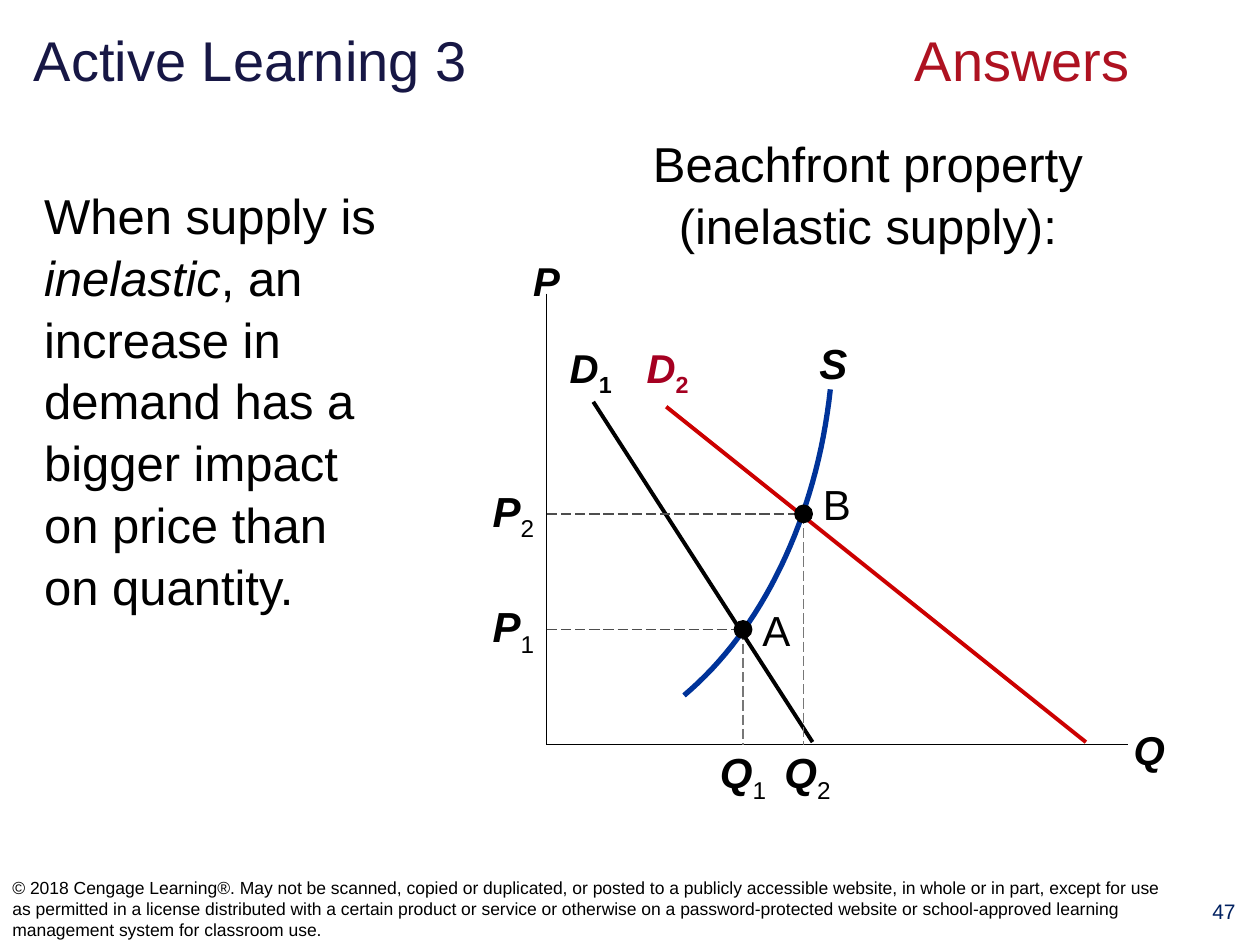
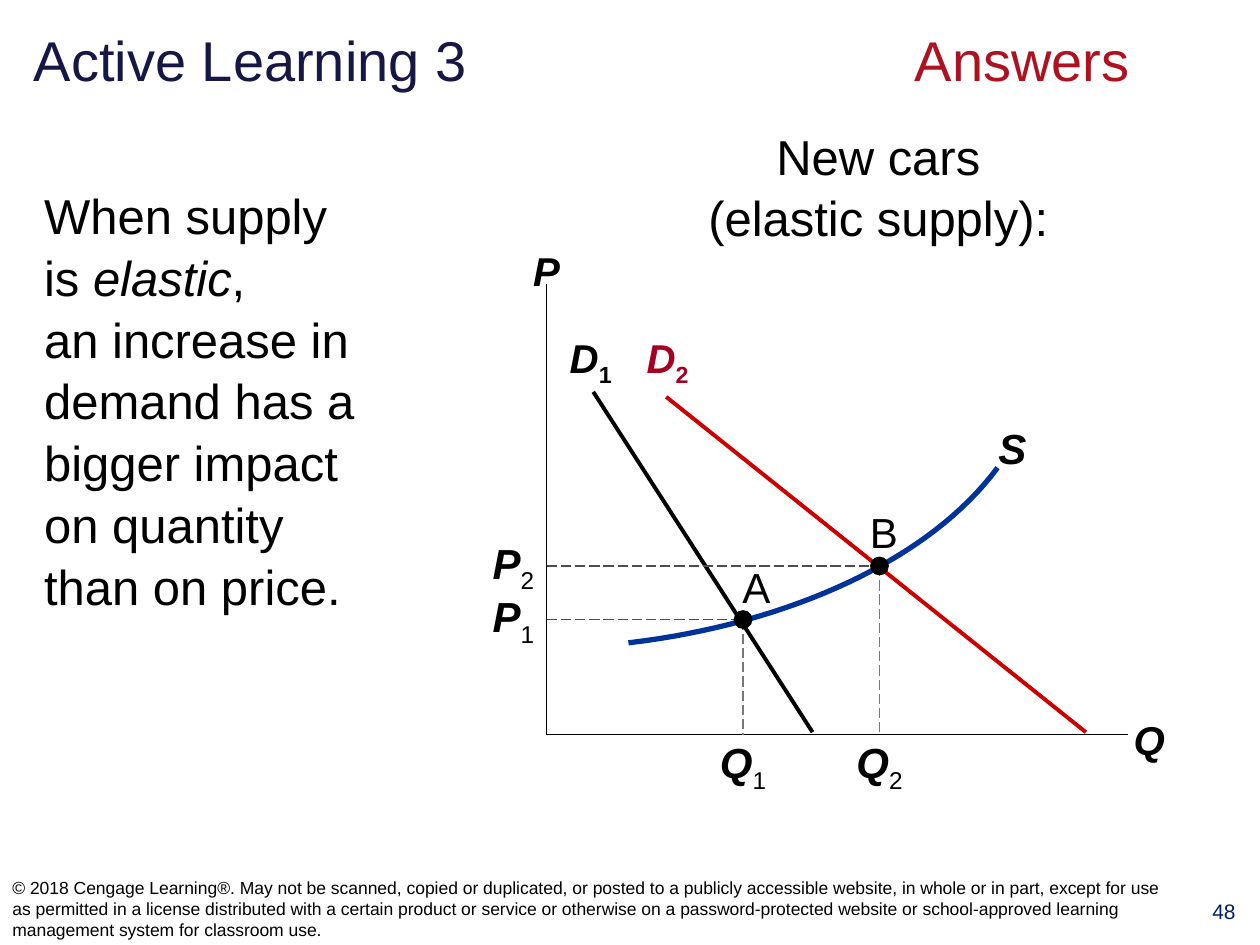
from dataclasses import dataclass
from lxml import etree
from pptx import Presentation
from pptx.dml.color import RGBColor
from pptx.enum.dml import MSO_LINE
from pptx.enum.shapes import MSO_CONNECTOR, MSO_SHAPE
from pptx.enum.text import MSO_ANCHOR, MSO_AUTO_SIZE, PP_ALIGN
from pptx.oxml.ns import qn
from pptx.util import Cm, Pt

LEFT, CENTER, RIGHT = PP_ALIGN.LEFT, PP_ALIGN.CENTER, PP_ALIGN.RIGHT
TOP, MIDDLE = MSO_ANCHOR.TOP, MSO_ANCHOR.MIDDLE
STRAIGHT, OVAL = MSO_CONNECTOR.STRAIGHT, MSO_SHAPE.OVAL
LONG_DASH, NO_FIT = MSO_LINE.LONG_DASH, MSO_AUTO_SIZE.NONE


@dataclass(frozen=True)
class Theme:
    font: str = "Arial"
    black: str = "000000"
    navy: str = "171745"
    answer: str = "AE1221"
    page: str = "002060"
    demand: str = "CC0000"
    demand_label: str = "A50021"
    supply: str = "003399"
    price_guide: str = "4D4D4D"
    quantity_guide: str = "777777"
    title_size: int = 32
    body_size: int = 28
    point_size: int = 24
    curve_size: int = 23
    page_size: int = 12
    footer_size: int = 10
    thin: float = 0.75
    medium: float = 2.25
    thick: float = 3


T = Theme()

# Content; chart positions are cm right of and above the origin
TITLE = ("Active Learning 3", "Answers")
FOOTER = (
    "© 2018 Cengage Learning®. May not be scanned, copied or duplicated, or posted "
    "to a publicly accessible website, in whole or in part, except for use as "
    "permitted in a license distributed with a certain product or service or "
    "otherwise on a password-protected website or school-approved learning "
    "management system for classroom use."
)
DEMAND = [
    {"sub": "1", "ends": [(0.94, 6.91), (5.36, 0.05)], "label": (0.89, 7.54),
     "line": T.black, "text": T.black},
    {"sub": "2", "ends": [(2.41, 6.81), (10.87, 0.05)], "label": (2.44, 7.54),
     "line": T.demand, "text": T.demand_label},
]
SLIDES = [
    {
        "page": "47",
        "body": ("When supply is ", "inelastic", ", an increase in demand has a "
                 "bigger impact on price than on quantity."),
        "heading": "Beachfront property (inelastic supply):",
        "heading_box": (12.62, 2.51, 9.75, 2.95),
        "base": 15.01,
        "supply": [(2.77, 0.99), (4.34, 2.31), (5.44, 4.57), (5.72, 7.16)],
        "supply_label": (5.78, 7.7),
        "points": [
            {"name": "A", "sub": "1", "at": (3.96, 2.32), "offset": (0.67, 0), "q_shift": 0},
            {"name": "B", "sub": "2", "at": (5.18, 4.65), "offset": (0.67, 0.2), "q_shift": 0.08},
        ],
    },
    {
        "page": "48",
        "body": ("When supply\nis ", "elastic", ",\nan increase in demand has a "
                 "bigger impact on quantity than on price."),
        "heading": "New cars\n(elastic supply):",
        "heading_box": (13.08, 2.36, 9.25, 2.95),
        "base": 14.81,
        "supply": [(1.65, 1.85), (4.95, 2.24), (7.75, 3.56), (9.09, 5.38)],
        "supply_label": (9.39, 5.79),
        "points": [
            {"name": "A", "sub": "1", "at": (3.96, 2.32), "offset": (0.27, 0.66), "q_shift": 0},
            {"name": "B", "sub": "2", "at": (6.71, 3.4), "offset": (0.09, 0.69), "q_shift": 0},
        ],
    },
]

ORIGIN_X = 11.02
AXIS_W, AXIS_H = 11.71, 9.09
LABEL_W, LABEL_H = 1.7, 1.25
DOT = 0.38
ANSWER_TAB = 17.76
CURVE_STEPS = 32


# Text helpers
def add_run(p, text, size, color=T.black, bold=False, italic=False, subscript=False):
    for i, part in enumerate(text.split("\n")):
        if i:
            p.add_line_break()
        r = p.add_run()
        r.text = part
        r.font.name, r.font.size = T.font, Pt(size)
        r.font.bold, r.font.italic = bold, italic
        r.font.color.rgb = RGBColor.from_string(color)
        if subscript:
            r._r.get_or_add_rPr().set("baseline", "-25000")


def setup_text(sp, align, anchor):
    tf = sp.text_frame
    tf.word_wrap, tf.auto_size, tf.vertical_anchor = True, NO_FIT, anchor
    p = tf.paragraphs[0]
    p.alignment = align
    return p


def add_text(slide, box, align=LEFT, anchor=TOP):
    sp = slide.shapes.add_textbox(*map(Cm, box))
    return setup_text(sp, align, anchor)


# Parts shared by the slides
def add_frame(slide, page):
    title = slide.shapes.title
    title.left, title.top, title.width, title.height = map(Cm, (0.43, 0.28, 24.56, 1.83))
    p = setup_text(title, LEFT, MIDDLE)
    tabs = etree.SubElement(p._p.get_or_add_pPr(), qn("a:tabLst"))
    etree.SubElement(tabs, qn("a:tab"), pos=str(Cm(ANSWER_TAB)), algn="l")
    name, part = TITLE
    add_run(p, name + "\t", T.title_size, T.navy)
    add_run(p, part, T.title_size, T.answer)
    p = add_text(slide, (23.95, 17.98, 1.45, 1.04), CENTER)
    add_run(p, page, T.page_size, T.page)
    p = add_text(slide, (0, 17.58, 23.9, 1.47), anchor=MIDDLE)
    add_run(p, FOOTER, T.footer_size)


def add_statements(slide, data):
    p = add_text(slide, (0.64, 3.56, 7.42, 12.75))
    p.line_spacing = 1.05
    for i, text in enumerate(data["body"]):
        add_run(p, text, T.body_size, italic=i == 1)
    p = add_text(slide, data["heading_box"], CENTER)
    p.line_spacing = 1.05
    add_run(p, data["heading"], T.body_size)


class Diagram:
    """Supply and demand diagram with its origin at the axes' corner."""

    def __init__(self, slide, base):
        self.shapes, self.slide, self.base = slide.shapes, slide, base

    def place(self, x, y):
        return Cm(ORIGIN_X + x), Cm(self.base - y)

    def line(self, start, end, color, width, dashed=False):
        sp = self.shapes.add_connector(STRAIGHT, *self.place(*start), *self.place(*end))
        sp.line.color.rgb = RGBColor.from_string(color)
        sp.line.width = Pt(width)
        if dashed:
            sp.line.dash_style = LONG_DASH
        etree.SubElement(sp._element.spPr, qn("a:effectLst"))

    def label(self, center, text, size, sub="", color=T.black, align=CENTER,
              strong=True, sub_bold=False):
        x, y = center
        box = (ORIGIN_X + x - LABEL_W / 2, self.base - y - LABEL_H / 2, LABEL_W, LABEL_H)
        p = add_text(self.slide, box, align, MIDDLE)
        add_run(p, text, size, color, strong, strong)
        if sub:
            add_run(p, sub, size, color, sub_bold, subscript=True)

    def curve(self, controls):
        dots = []
        for i in range(CURVE_STEPS + 1):
            t = i / CURVE_STEPS
            weights = ((1 - t) ** 3, 3 * t * (1 - t) ** 2, 3 * t * t * (1 - t), t ** 3)
            dots.append(self.place(*(sum(w * c[k] for w, c in zip(weights, controls))
                                     for k in (0, 1))))
        builder = self.shapes.build_freeform(*dots[0])
        builder.add_line_segments(dots[1:], close=False)
        sp = builder.convert_to_shape()
        sp.shadow.inherit = False
        sp.fill.background()
        sp.line.color.rgb = RGBColor.from_string(T.supply)
        sp.line.width = Pt(T.thick)

    def dot(self, x, y):
        left, top = self.place(x - DOT / 2, y + DOT / 2)
        sp = self.shapes.add_shape(OVAL, left, top, Cm(DOT), Cm(DOT))
        sp.shadow.inherit = False
        sp.fill.solid()
        sp.fill.fore_color.rgb = RGBColor.from_string(T.black)
        sp.line.fill.background()

    def equilibrium(self, point):
        x, y = point["at"]
        dx, dy = point["offset"]
        self.line((0, y), (x, y), T.price_guide, T.thin, dashed=True)
        self.line((x, y), (x, 0), T.quantity_guide, T.thin, dashed=True)
        self.dot(x, y)
        self.label((x + dx, y + dy), point["name"], T.point_size, strong=False)
        self.label((-LABEL_W / 2, y), "P", T.point_size, point["sub"], align=RIGHT)
        self.label((x + point["q_shift"], -LABEL_H / 2), "Q", T.point_size, point["sub"])


def add_diagram(slide, data):
    d = Diagram(slide, data["base"])
    # Axes
    d.line((0, AXIS_H), (0, 0), T.black, T.thin)
    d.line((0, 0), (AXIS_W, 0), T.black, T.thin)
    d.label((0, 9.35), "P", T.curve_size)
    d.label((12.15, -0.1), "Q", T.curve_size)
    # Curves
    d.curve(data["supply"])
    d.label(data["supply_label"], "S", T.point_size)
    for curve in DEMAND:
        d.line(*curve["ends"], curve["line"], T.medium)
        d.label(curve["label"], "D", T.curve_size, curve["sub"], curve["text"], sub_bold=True)
    # Equilibrium points
    for point in data["points"]:
        d.equilibrium(point)


def main():
    prs = Presentation()
    prs.slide_width, prs.slide_height = Cm(25.4), Cm(19.05)
    for data in SLIDES:
        slide = prs.slides.add_slide(prs.slide_layouts[5])
        add_frame(slide, data["page"])
        add_statements(slide, data)
        add_diagram(slide, data)
    prs.save("out.pptx")


if __name__ == "__main__":
    main()
